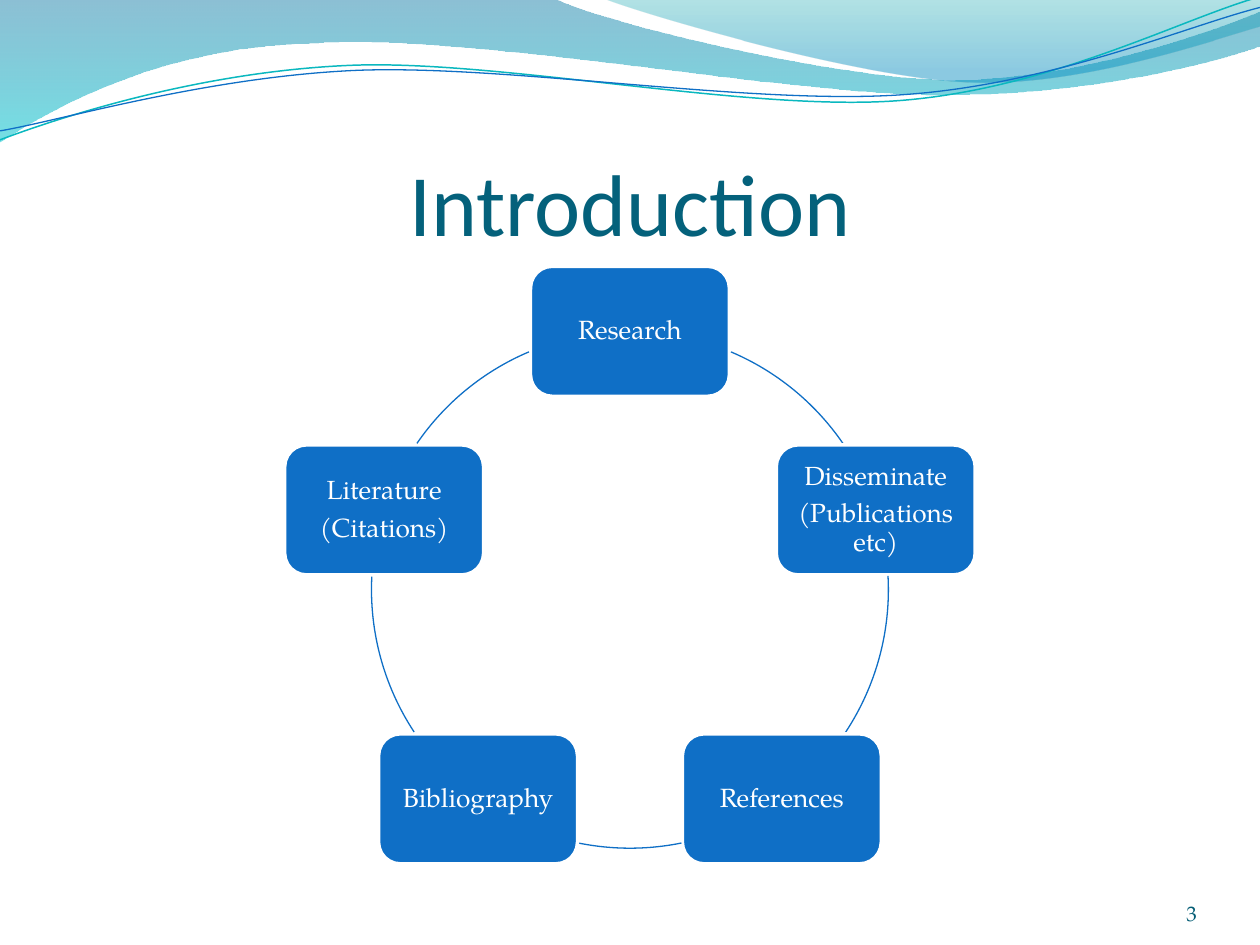
import math
from dataclasses import dataclass

import pptx
import pptx.dml.color
import pptx.enum.shapes
import pptx.enum.text
import pptx.oxml.ns
import pptx.util
from lxml import etree

Cm = pptx.util.Cm
Pt = pptx.util.Pt
Align = pptx.enum.text.PP_ALIGN
Anchor = pptx.enum.text.MSO_ANCHOR
qn = pptx.oxml.ns.qn

BLUE = "0F6FC6"
WHITE = "FFFFFF"
SERIF = "TeX Gyre Pagella"
CENTER_X, CENTER_Y, RADIUS = 12.7, 11.89, 5.21
RING_BOX = (CENTER_X - RADIUS, CENTER_Y - RADIUS, 2 * RADIUS, 2 * RADIUS)
CARD_WIDTH, CARD_HEIGHT = 4.01, 2.62


@dataclass
class Stop:
    position: float
    color: str
    opacity: int


@dataclass
class Outline:
    box: tuple
    start: tuple
    segments: list
    stops: tuple = ()
    line: str = BLUE
    weight: float = 0.75
    rotation: float = 0


@dataclass
class Card:
    angle: float
    lines: tuple


@dataclass
class Arc:
    start: float
    end: float


WAVES = [
    Outline((-0.03, -0.03, 25.46, 2.9), (0, 0), [
        [(11.18, -0.03)],
        [(12.09, 0.43), (16.87, 1.6), (19.25, 1.6)],
        [(21.67, 1.6), (24.33, 0.66), (25.4, 0.23)],
        [(25.43, 0.91)],
        [(24.97, 1.12), (22.1, 1.93), (18.95, 1.91)],
        [(15.8, 1.91), (9.7, 0.71), (6.53, 0.86)],
        [(3.28, 0.91), (1.17, 2.11), (-0.03, 2.87)],
        [(0, 0)],
    ], stops=(Stop(0, "0074A1", 45), Stop(1, "00C6CF", 55))),
    Outline((12.17, -0.03, 13.23, 1.78), (12.17, -0.03), [
        [(12.93, 0.28), (17.32, 1.57), (19.53, 1.65)],
        [(21.74, 1.75), (24.41, 0.81), (25.4, 0.53)],
        [(25.4, 0)],
        [(12.17, -0.03)],
    ], stops=(Stop(0, "00A1A9", 30), Stop(0.8, "008BBF", 45))),
    Outline((-0.05, 0.56, 25.45, 1.8), (0, 2.82), [
        [(1.22, 2.36), (4.01, 1.45), (7.04, 1.32)],
        [(10.03, 1.19), (15.06, 2.26), (18.11, 2.03)],
        [(21.16, 1.8), (23.83, 0.38), (25.35, -0.05)],
    ], line="0AB8BF", weight=0.85, rotation=-2.7),
    Outline((-0.05, 0.76, 25.48, 1.47), (0, 2.64), [
        [(1.19, 2.44), (4.17, 1.55), (7.19, 1.42)],
        [(10.24, 1.3), (15.16, 2.13), (18.21, 1.91)],
        [(21.23, 1.7), (23.9, 0.53), (25.4, 0.15)],
    ], rotation=-2.7),
]

LABELS = [
    ("Research",),
    ("Disseminate", "(Publications etc)"),
    ("References",),
    ("Bibliography",),
    ("Literature", "(Citations)"),
]
CARDS = [Card(-90 + 72 * index, lines) for index, lines in enumerate(LABELS)]

RIGHT_ARCS = [Arc(-67, -34.5), Arc(-3.1, 33.4)]
ARCS = RIGHT_ARCS + [Arc(78.5, 101.5)] + [
    Arc(180 - arc.end, 180 - arc.start) for arc in reversed(RIGHT_ARCS)
]


def rgb(value: str) -> pptx.dml.color.RGBColor:
    return pptx.dml.color.RGBColor.from_string(value)


def on_ring(angle: float, pull: float = 0) -> tuple:
    turn = math.radians(angle)
    across, down = math.cos(turn), math.sin(turn)
    return (CENTER_X + RADIUS * (across - pull * down),
            CENTER_Y + RADIUS * (down + pull * across))


def arc_outline(arc: Arc) -> Outline:
    pull = 4 / 3 * math.tan(math.radians(arc.end - arc.start) / 4)
    curve = [on_ring(arc.start, pull), on_ring(arc.end, -pull), on_ring(arc.end)]
    return Outline(RING_BOX, on_ring(arc.start), [curve])


def inside_box(point: tuple, outline: Outline) -> tuple:
    left, top, width, height = outline.box
    turn = math.radians(-outline.rotation)
    across, down = point[0] - left - width / 2, point[1] - top - height / 2
    return (width / 2 + across * math.cos(turn) - down * math.sin(turn),
            height / 2 + across * math.sin(turn) + down * math.cos(turn))


def add_step(track, tag: str, points: list, outline: Outline) -> None:
    step = etree.SubElement(track, qn(tag))
    for point in points:
        x, y = inside_box(point, outline)
        etree.SubElement(step, qn("a:pt"), x=str(Cm(x)), y=str(Cm(y)))


def stroke(shape, color: str, weight: float) -> None:
    shape.line.color.rgb = rgb(color)
    shape.line.width = Pt(weight)


def add_outline(page, outline: Outline) -> None:
    builder = page.shapes.build_freeform(0, 0, scale=1.0)
    builder.add_line_segments([(Cm(1), Cm(1))], close=False)
    shape = builder.convert_to_shape()
    shape.left, shape.top, shape.width, shape.height = map(Cm, outline.box)
    shape.rotation = outline.rotation
    shape.shadow.inherit = False
    track = next(shape.element.iter(qn("a:path")))
    for step in list(track):
        track.remove(step)
    track.set("w", str(shape.width))
    track.set("h", str(shape.height))
    add_step(track, "a:moveTo", [outline.start], outline)
    for segment in outline.segments:
        tag = "a:lnTo" if len(segment) == 1 else "a:cubicBezTo"
        add_step(track, tag, segment, outline)
    if outline.stops:
        etree.SubElement(track, qn("a:close"))
        fill_gradient(shape, outline.stops)
        shape.line.fill.background()
    else:
        shape.fill.background()
        stroke(shape, outline.line, outline.weight)


def fill_gradient(shape, stops: tuple) -> None:
    shape.fill.gradient()
    shape.fill.gradient_angle = 270
    for target, stop in zip(shape.fill.gradient_stops, stops):
        target.position = stop.position
        target.color.rgb = rgb(stop.color)
    for color, stop in zip(shape.element.spPr.iter(qn("a:srgbClr")), stops):
        etree.SubElement(color, qn("a:alpha")).set("val", str(stop.opacity * 1000))


def set_text(box, lines: tuple, font: str, size: float, color: str,
             align: Align, anchor: Anchor, insets: tuple) -> None:
    frame = box.text_frame
    frame.word_wrap = True
    frame.auto_size = pptx.enum.text.MSO_AUTO_SIZE.NONE
    frame.vertical_anchor = anchor
    (frame.margin_left, frame.margin_top,
     frame.margin_right, frame.margin_bottom) = map(Cm, insets)
    for index, line in enumerate(lines):
        para = frame.add_paragraph() if index else frame.paragraphs[0]
        para.alignment = align
        span = para.add_run()
        span.text = line
        span.font.name = font
        span.font.size = Pt(size)
        span.font.color.rgb = rgb(color)


def add_card(page, card: Card) -> None:
    x, y = on_ring(card.angle)
    box = page.shapes.add_shape(
        pptx.enum.shapes.MSO_SHAPE.ROUNDED_RECTANGLE,
        Cm(x - CARD_WIDTH / 2), Cm(y - CARD_HEIGHT / 2), Cm(CARD_WIDTH), Cm(CARD_HEIGHT))
    box.shadow.inherit = False
    box.fill.solid()
    box.fill.fore_color.rgb = rgb(BLUE)
    stroke(box, WHITE, 2)
    set_text(box, card.lines, SERIF, 15, WHITE, Align.CENTER, Anchor.MIDDLE, (0.28,) * 4)
    for para in box.text_frame.paragraphs:
        para.line_spacing = 0.9
        para.space_after = Pt(5.25)


def main() -> None:
    deck = pptx.Presentation()
    deck.slide_width, deck.slide_height = Cm(25.4), Cm(19.05)
    page = deck.slides.add_slide(deck.slide_layouts[5])
    for wave in WAVES:
        add_outline(page, wave)
    title = page.shapes.title
    title.left, title.top, title.width, title.height = map(Cm, (1.27, 1.95, 22.86, 3.18))
    set_text(title, ("Introduction",), "Calibri", 50, "04617B",
             Align.CENTER, Anchor.BOTTOM, (0, 0.13, 0, 0))
    for card, arc in zip(CARDS, ARCS):
        add_card(page, card)
        add_outline(page, arc_outline(arc))
    number = page.shapes.add_textbox(*map(Cm, (22.02, 17.65, 2.11, 1.02)))
    set_text(number, ("3",), SERIF, 12, "045D75", Align.RIGHT, Anchor.BOTTOM, (0,) * 4)
    deck.save("out.pptx")


if __name__ == "__main__":
    main()
